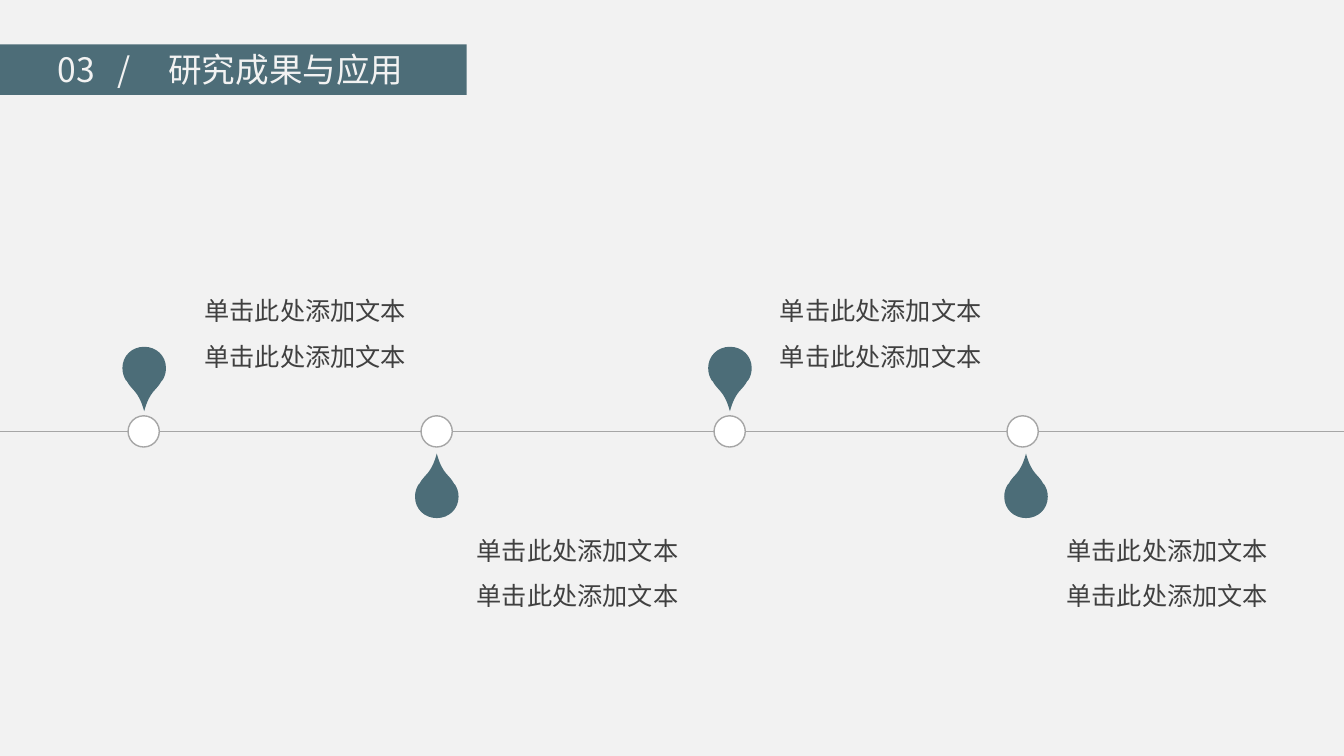
from lxml import etree
from pptx import Presentation
from pptx import util as u
from pptx.dml.color import RGBColor
from pptx.enum import shapes, text
from pptx.oxml import ns

TEAL = RGBColor(0x4C, 0x6D, 0x78)
BANNER = RGBColor(0x4D, 0x6D, 0x78)
GREY = RGBColor(0xA6, 0xA6, 0xA6)
DARK = RGBColor(0x40, 0x40, 0x40)
PALE = RGBColor(0xF2, 0xF2, 0xF2)
WHITE = RGBColor(0xFF, 0xFF, 0xFF)
FONT = "Noto Sans CJK SC"
WIDTH, HEIGHT = u.Inches(13.33), u.Inches(7.5)

AXIS_Y = 57.07
FIRST_X, STEP_X = 10.69, 21.8
LABEL = "单击此处添加文本"
LABEL_TOP = {True: 36.43, False: 68.16}
PIN_ROUND_END = {True: 45.87, False: 68.53}
PIN_HALF_WIDTH, PIN_HEIGHT, PIN_CORE = 1.62, 8.53, 2.93
PIN_HALF = [
    (0, 0), (0.56, 0), (1, 0.14), (1, 0.33),
    (1, 0.41), (0.93, 0.47), (0.84, 0.52),
    (0.8, 0.53), (0.55, 0.69), (0.27, 0.67), (0, 1),
]
PIN_SEGMENTS = (3, 3, 1, 3, 3, 1, 3, 3)
MILESTONES = [
    (10.73, 14.48, True),
    (32.5, 34.73, False),
    (54.31, 57.29, True),
    (76.34, 78.62, False),
]


def across(percent):
    return u.Emu(round(WIDTH * percent / 100))


def down(percent):
    return u.Emu(round(HEIGHT * percent / 100))


def style(p, size, color):
    p.font.size = u.Pt(size)
    p.font.color.rgb = color
    p.font.name = FONT
    etree.SubElement(p.font._element, ns.qn("a:ea"), typeface=FONT)


def paint(sp, fill, line=None):
    sp.shadow.inherit = False
    sp.fill.solid()
    sp.fill.fore_color.rgb = fill
    if line is None:
        sp.line.fill.background()
    else:
        sp.line.color.rgb = line
        sp.line.width = u.Pt(1)


def add_title(s):
    sp = s.shapes.title
    sp.left, sp.top = across(-0.53), down(5.87)
    sp.width, sp.height = across(35.26), down(6.67)
    sp.fill.solid()
    sp.fill.fore_color.rgb = BANNER
    tf = sp.text_frame
    tf.auto_size = text.MSO_AUTO_SIZE.NONE
    tf.vertical_anchor = text.MSO_ANCHOR.MIDDLE
    tf.margin_left, tf.margin_bottom = across(4.8), down(0.27)
    tf.margin_right = tf.margin_top = 0
    p = tf.paragraphs[0]
    p.text = "03\t/\t研究成果与应用"
    p.alignment = text.PP_ALIGN.LEFT
    stops = etree.SubElement(p._p.get_or_add_pPr(), ns.qn("a:tabLst"))
    for stop in (4.45, 8.25):
        etree.SubElement(stops, ns.qn("a:tab"), pos=str(across(stop)), algn="l")
    style(p, 24, PALE)


def add_axis(s):
    line = s.shapes.add_connector(
        shapes.MSO_CONNECTOR.STRAIGHT, 0, down(AXIS_Y), WIDTH, down(AXIS_Y))
    line.line.color.rgb = GREY
    line.line.width = u.Pt(1)
    etree.SubElement(line._element.spPr, ns.qn("a:effectLst"))


def add_disc(s, x, y, diameter, fill, line=None):
    size = down(diameter)
    sp = s.shapes.add_shape(
        shapes.MSO_SHAPE.OVAL, across(x) - size // 2,
        down(y) - size // 2, size, size)
    paint(sp, fill, line)


def round_segments(sp, segments):
    edges = iter(list(sp._element.iter(ns.qn("a:lnTo"))))
    for count in segments:
        first, *rest = [next(edges) for _ in range(count)]
        if rest:
            first.tag = ns.qn("a:cubicBezTo")
            for edge in rest:
                first.append(edge[0])
                edge.getparent().remove(edge)


def add_pin(s, x, above):
    outline = PIN_HALF + [(-dx, dy) for dx, dy in PIN_HALF[-2::-1]]
    sign = 1 if above else -1
    end = PIN_ROUND_END[above]
    points = [(across(x + dx * PIN_HALF_WIDTH), down(end + sign * dy * PIN_HEIGHT))
              for dx, dy in outline]
    builder = s.shapes.build_freeform(*points[0])
    builder.add_line_segments(points[1:], close=True)
    sp = builder.convert_to_shape()
    round_segments(sp, PIN_SEGMENTS)
    paint(sp, TEAL)
    add_disc(s, x, end + sign * PIN_CORE, 3.47, TEAL)


def add_label(s, x, above):
    sp = s.shapes.add_textbox(
        across(x), down(LABEL_TOP[above]), across(18.6), down(12.8))
    tf = sp.text_frame
    tf.word_wrap = True
    tf.auto_size = text.MSO_AUTO_SIZE.SHAPE_TO_FIT_TEXT
    tf.text = "\n".join([LABEL] * 2)
    for p in tf.paragraphs:
        p.line_spacing = 1.5
        style(p, 18, DARK)


def main():
    prs = Presentation()
    prs.slide_width, prs.slide_height = WIDTH, HEIGHT
    s = prs.slides.add_slide(prs.slide_layouts[5])
    s.background.fill.solid()
    s.background.fill.fore_color.rgb = PALE
    add_title(s)
    add_axis(s)
    for i, (pin_x, label_x, above) in enumerate(MILESTONES):
        add_disc(s, FIRST_X + i * STEP_X, AXIS_Y, 4.13, WHITE, GREY)
        add_pin(s, pin_x, above)
        add_label(s, label_x, above)
    prs.save("out.pptx")


if __name__ == "__main__":
    main()
